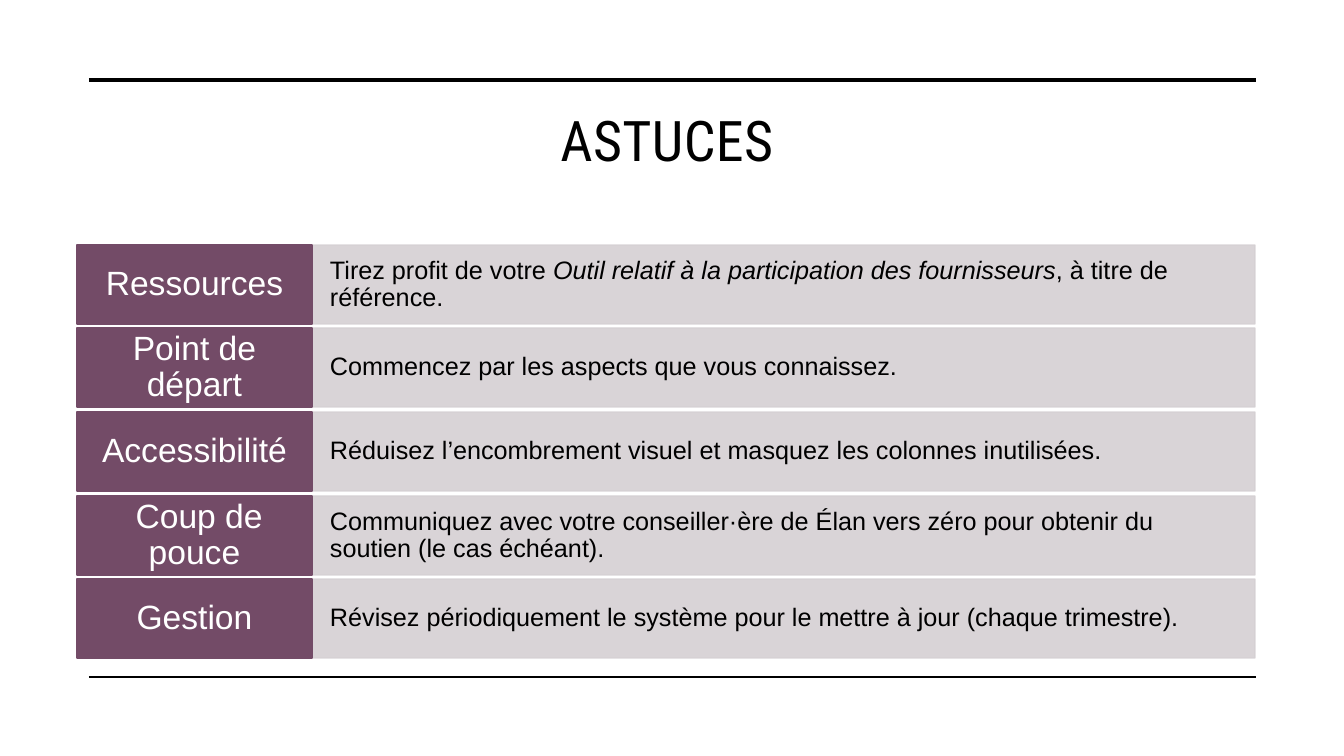
from dataclasses import dataclass

from lxml.etree import SubElement
from pptx import Presentation
from pptx.dml.color import RGBColor as Rgb
from pptx.enum.shapes import MSO_CONNECTOR as Connector, MSO_SHAPE as Shape
from pptx.enum.text import MSO_ANCHOR as Anchor, PP_ALIGN as Align
from pptx.oxml.ns import qn
from pptx.util import Emu, Pt


@dataclass(frozen=True)
class Theme:
    """Colours, fonts and type sizes of the slide."""
    ink: Rgb = Rgb.from_string("000000")
    paper: Rgb = Rgb.from_string("FFFFFF")
    plum: Rgb = Rgb.from_string("734B67")
    mist: Rgb = Rgb.from_string("D5D0D3")
    title_font: str = "Roboto Condensed"
    body_font: str = "Arial"
    title_size: int = 40
    label_size: int = 24
    tip_size: int = 18


THEME = Theme()
EMU_PER_PX = 914400 / 100.8
SLIDE_SIZE = (1344, 756)
TITLE_BOX = (78, 101, 1178, 144)
TIPS_BOX = (77, 245, 1178, 413)
RULES_BOX = (89, 80, 1167, 597)

TIPS = [
    ("Ressources", ["Tirez profit de votre ",
                    "Outil relatif à la participation des fournisseurs",
                    ", à titre de référence."]),
    ("Point de départ", ["Commencez par les aspects que vous connaissez."]),
    ("Accessibilité", ["Réduisez l’encombrement visuel et masquez les colonnes inutilisées."]),
    (" Coup de pouce", ["Communiquez avec votre conseiller·ère de Élan vers zéro pour obtenir "
                        "du soutien (le cas échéant)."]),
    ("Gestion", ["Révisez périodiquement le système pour le mettre à jour (chaque trimestre)."]),
]


def px(length):
    """Turn a length in px into EMU."""
    return Emu(round(length * EMU_PER_PX))


def place(box):
    """Turn a box in px into EMU."""
    return [px(length) for length in box]


def style(run, font, size, color):
    """Give a run its font, size and colour."""
    run.font.name = font
    run.font.size = Pt(size)
    run.font.color.rgb = color


def draw_rules(slide, box):
    """Draw the thick rule above and the thin rule below the content."""
    left, top, width, height = box
    for y, weight in ((top, 3.5), (top + height, 1)):
        rule = slide.shapes.add_connector(Connector.STRAIGHT, *place((left, y, left + width, y)))
        rule.line.color.rgb = THEME.ink
        rule.line.width = Pt(weight)
        SubElement(rule._element.spPr, qn("a:effectLst"))


def draw_title(slide, box):
    """Write the centred slide title."""
    frame = slide.shapes.add_textbox(*place(box)).text_frame
    frame.word_wrap = True
    heading = frame.paragraphs[0]
    heading.text = "ASTUCES"
    heading.alignment = Align.CENTER
    style(heading.runs[0], THEME.title_font, THEME.title_size, THEME.ink)
    heading.runs[0].font._element.set("spc", "30")


def draw_cell(slide, box, color, insets, phrases, size, ink, align, opacity=100):
    """Draw a filled cell whose second phrase, if any, is italic."""
    cell = slide.shapes.add_shape(Shape.RECTANGLE, *place(box))
    cell.shadow.inherit = False
    cell.fill.solid()
    cell.fill.fore_color.rgb = color
    cell.line.color.rgb = color
    cell.line.width = Pt(1)
    if opacity < 100:
        for swatch in cell._element.spPr.iter(qn("a:srgbClr")):
            SubElement(swatch, qn("a:alpha"), val=str(opacity * 1000))
    frame = cell.text_frame
    frame.word_wrap = True
    frame.vertical_anchor = Anchor.MIDDLE
    frame.margin_left = frame.margin_right = px(insets[0])
    frame.margin_top = frame.margin_bottom = px(insets[1])
    line = frame.paragraphs[0]
    line.alignment = align
    line.line_spacing = 0.9
    for index, phrase in enumerate(phrases):
        run = line.add_run()
        run.text = phrase
        style(run, THEME.body_font, size, ink)
        run.font.italic = index == 1


def draw_tips(slide, box):
    """Stack the rows of label and tip evenly in the box."""
    left, top, width, height = box
    label_width, row_height = width // 5, 79
    pitch = (height - row_height) / (len(TIPS) - 1)
    for index, (label, tip) in enumerate(TIPS):
        y = round(top + index * pitch)
        draw_cell(slide, (left + label_width, y, width - label_width, row_height), THEME.mist,
                  (18, 20), tip, THEME.tip_size, THEME.ink, Align.LEFT, opacity=90)
        draw_cell(slide, (left, y, label_width, row_height), THEME.plum,
                  (12, 8), [label], THEME.label_size, THEME.paper, Align.CENTER)


def main():
    """Build and save the slide."""
    deck = Presentation()
    deck.slide_width, deck.slide_height = place(SLIDE_SIZE)
    slide = deck.slides.add_slide(deck.slide_layouts[6])
    draw_rules(slide, RULES_BOX)
    draw_title(slide, TITLE_BOX)
    draw_tips(slide, TIPS_BOX)
    deck.save("out.pptx")


if __name__ == "__main__":
    main()
